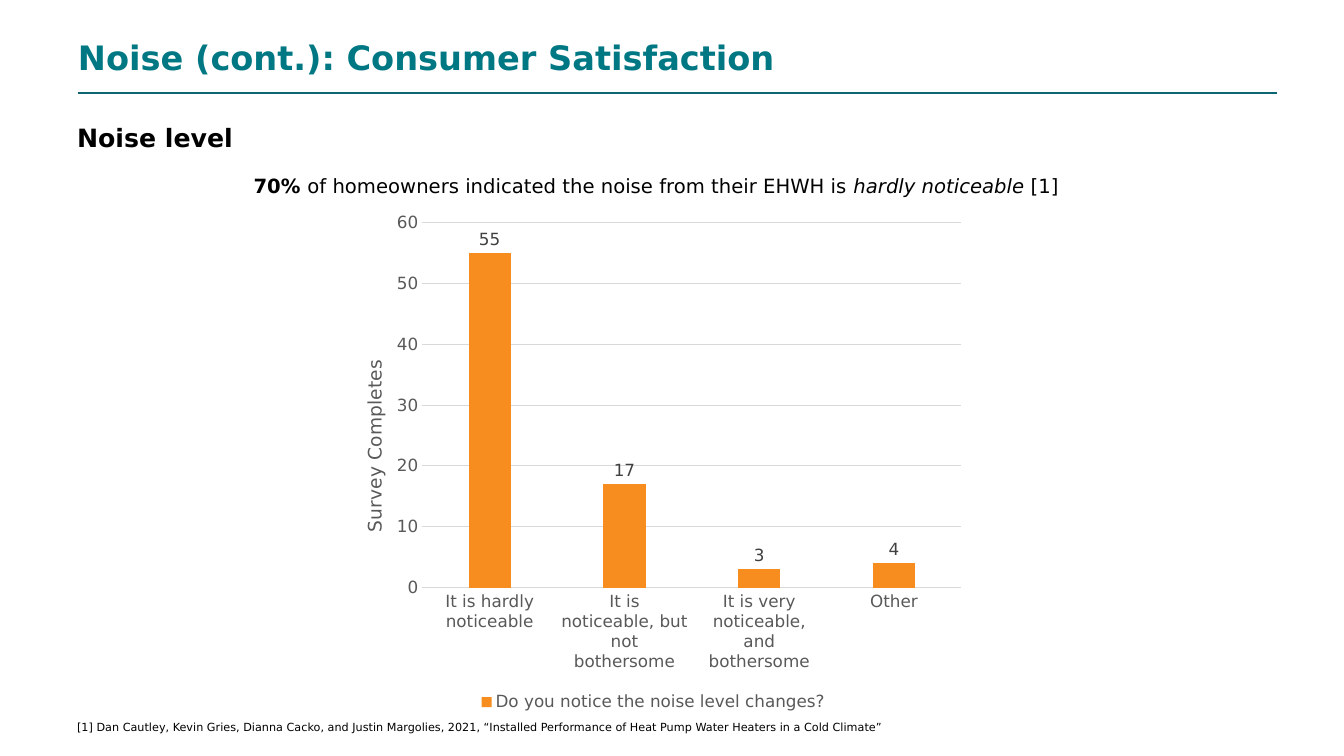
from lxml import etree
from pptx import Presentation
from pptx.chart.data import CategoryChartData
from pptx.dml.color import RGBColor
from pptx.enum.chart import XL_CHART_TYPE, XL_LABEL_POSITION, XL_LEGEND_POSITION, XL_TICK_MARK
from pptx.enum.shapes import MSO_CONNECTOR
from pptx.enum.text import MSO_ANCHOR
from pptx.oxml import parse_xml
from pptx.oxml.ns import nsdecls, qn
from pptx.util import Pt

COLUMNS = XL_CHART_TYPE.COLUMN_CLUSTERED
OUTSIDE = XL_LABEL_POSITION.OUTSIDE_END
BOTTOM = XL_LEGEND_POSITION.BOTTOM
NO_TICK = XL_TICK_MARK.NONE
STRAIGHT = MSO_CONNECTOR.STRAIGHT
MIDDLE = MSO_ANCHOR.MIDDLE


def color(value):
    return RGBColor.from_string(value)


def chart_layout(**settings):
    layout = parse_xml(f"<c:layout {nsdecls('c')}><c:manualLayout/></c:layout>")
    for tag, value in settings.items():
        etree.SubElement(layout[0], qn(f"c:{tag}")).set("val", str(value))
    return layout


class NoiseSlide:
    typeface = "DejaVu Sans"
    ink = "000000"
    teal = "007884"
    rule_color = "0C6571"
    axis_ink = "595959"
    label_ink = "404040"
    grid_color = "D9D9D9"
    bar_color = "F78D1E"

    def __init__(self, deck):
        self.slide = deck.slides.add_slide(deck.slide_layouts[5])

    def style(self, font, size, ink, bold=None):
        font.name = self.typeface
        font.size = Pt(size)
        font.color.rgb = color(ink)
        font.bold = bold

    def place(self, shape, box):
        shape.left, shape.top, shape.width, shape.height = map(Pt, box)

    def title(self, wording, box):
        heading = self.slide.shapes.title
        self.place(heading, box)
        frame = heading.text_frame
        frame.text = wording
        frame.vertical_anchor = MIDDLE
        paragraph = frame.paragraphs[0]
        paragraph.alignment = 1
        self.style(paragraph.font, 24, self.teal, True)

    def rule(self, left, right, y):
        line = self.slide.shapes.add_connector(STRAIGHT, Pt(left), Pt(y), Pt(right), Pt(y))
        line.line.color.rgb = color(self.rule_color)
        line.line.width = Pt(1.5)
        etree.SubElement(line._element.spPr, qn("a:effectLst"))

    def text(self, pieces, box, size, bold=None):
        frame = self.slide.shapes.add_textbox(*map(Pt, box)).text_frame
        frame.word_wrap = True
        paragraph = frame.paragraphs[0]
        self.style(paragraph.font, size, self.ink, bold)
        for wording, emphasis in pieces:
            run = paragraph.add_run()
            run.text = wording
            if emphasis == "bold":
                run.font.bold = True
            elif emphasis == "italic":
                run.font.italic = True
        return paragraph

    def column_chart(self, question, answers, axis_name, box):
        data = CategoryChartData()
        data.categories = list(answers)
        data.add_series(question, list(answers.values()))
        chart = self.slide.shapes.add_chart(COLUMNS, *map(Pt, box), data).chart
        self.style(chart.font, 10, self.ink)
        chart.has_title = False
        chart.has_legend = True
        chart.legend.position = BOTTOM
        chart.legend.include_in_layout = False
        self.style(chart.legend.font, 12, self.axis_ink)

        for axis in (chart.category_axis, chart.value_axis):
            axis.major_tick_mark = axis.minor_tick_mark = NO_TICK
            self.style(axis.tick_labels.font, 12, self.axis_ink)
        self.hairline(chart.category_axis.format.line)
        counts = chart.value_axis
        counts.format.line.fill.background()
        counts.minimum_scale, counts.maximum_scale, counts.major_unit = 0, 60, 10
        self.hairline(counts.major_gridlines.format.line)
        axis_title = counts.axis_title
        axis_title.text_frame.text = axis_name
        self.style(axis_title.text_frame.paragraphs[0].font, 13.3, self.axis_ink, False)

        plot = chart.plots[0]
        plot.gap_width, plot.overlap = 219, -27
        plot.vary_by_categories = False
        bars = plot.series[0]
        bars.format.fill.solid()
        bars.format.fill.fore_color.rgb = color(self.bar_color)
        labels = bars.data_labels
        labels.show_value = True
        labels.position = OUTSIDE
        self.style(labels.font, 12, self.label_ink)

        self.set_layout(axis_title._element, 1, xMode="edge", yMode="edge", x=0.04, y=0.3)
        area = chart._chartSpace.chart.plotArea
        self.set_layout(area, 0, layoutTarget="inner", xMode="edge", yMode="edge",
                        x=0.14, y=0.04, w=0.84, h=0.71)

    def hairline(self, line):
        line.color.rgb = color(self.grid_color)
        line.width = Pt(0.75)

    def set_layout(self, element, position, **settings):
        for previous in element.findall(qn("c:layout")):
            element.remove(previous)
        element.insert(position, chart_layout(**settings))


def main():
    deck = Presentation()
    deck.slide_width, deck.slide_height = Pt(960), Pt(540)
    page = NoiseSlide(deck)
    page.rule(56, 912, 66.5)
    page.title("Noise (cont.): Consumer Satisfaction", (48.5, 21.5, 760, 38))
    page.text([("Noise level", None)], (48, 84, 684, 29), 18, True)
    source = page.text(
        [("[1] Dan Cautley, Kevin Gries, Dianna Cacko, and Justin Margolies, 2021, "
          "“Installed Performance of Heat Pump Water Heaters in a Cold Climate”", None)],
        (48, 510, 823, 17), 8)
    source.line_spacing = 1.07
    source.space_after = Pt(8)
    page.text(
        [("70% ", "bold"),
         ("of homeowners indicated the noise from their EHWH is ", None),
         ("hardly noticeable ", "italic"),
         ("[1]", None)],
        (174, 120.5, 749, 24), 14)
    page.column_chart(
        "Do you notice the noise level changes?",
        {"It is hardly noticeable": 55,
         "It is noticeable, but not bothersome": 17,
         "It is very noticeable, and bothersome": 3,
         "Other": 4},
        "Survey Completes", (237.5, 144.5, 458.5, 367))
    deck.save("out.pptx")


if __name__ == "__main__":
    main()
